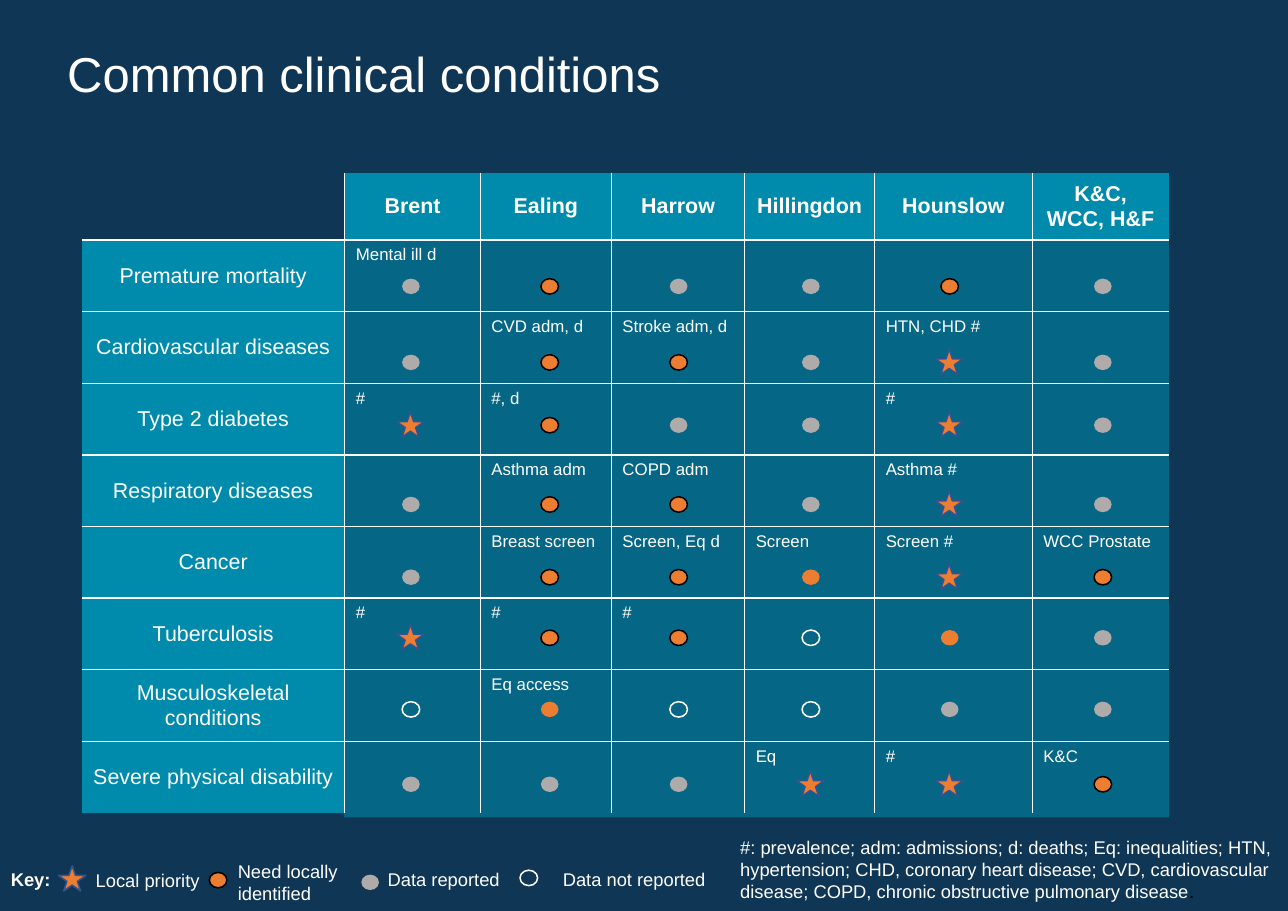
from lxml import etree
from pptx import Presentation
from pptx.dml.color import RGBColor
from pptx.enum.shapes import MSO_SHAPE
from pptx.enum.text import MSO_ANCHOR, MSO_AUTO_SIZE, PP_ALIGN
from pptx.oxml import parse_xml
from pptx.oxml.ns import nsdecls, qn
from pptx.util import Pt

PX = 9144  # 100 px to the inch
NAVY = RGBColor(0x0F, 0x36, 0x54)
TEAL = RGBColor(0x00, 0x8A, 0xAB)
WHITE = RGBColor(0xFF, 0xFF, 0xFF)
BLACK = RGBColor(0x00, 0x00, 0x00)
ORANGE = RGBColor(0xED, 0x7D, 0x31)
GREY = RGBColor(0xAF, 0xAB, 0xAB)
BLUE = RGBColor(0x32, 0x54, 0x91)

# Mark kinds: shape, width, height, fill, line
DOT = MSO_SHAPE.FLOWCHART_CONNECTOR
MARKS = {
    "star": (MSO_SHAPE.STAR_5_POINT, 25, 23, ORANGE, BLUE),
    "need": (DOT, 16, 14, ORANGE, BLACK),
    "plain": (DOT, 16, 14, ORANGE, None),
    "data": (DOT, 16, 14, GREY, None),
    "none": (DOT, 16, 14, None, WHITE),
}


def add_run(p, text, size, color=WHITE, bold=False, font="Arial"):
    r = p.add_run()
    r.text = text
    r.font.name = font
    r.font.size = Pt(size)
    r.font.bold = bold
    r.font.color.rgb = color


def add_mark(kind, cx, cy):
    shape, w, h, fill, line = MARKS[kind]
    sp = s.shapes.add_shape(shape, (cx - (w + 1) // 2) * PX,
                            (cy - (h + 1) // 2) * PX, w * PX, h * PX)
    sp.shadow.inherit = False
    if fill is None:
        sp.fill.background()
    else:
        sp.fill.solid()
        sp.fill.fore_color.rgb = fill
    if line is None:
        sp.line.fill.background()
    else:
        sp.line.color.rgb = line
        sp.line.width = Pt(1)


prs = Presentation()
prs.slide_width, prs.slide_height = 1169 * PX, 827 * PX
s = prs.slides.add_slide(prs.slide_layouts[5])
s.background.fill.solid()
s.background.fill.fore_color.rgb = NAVY

# Title
sp = s.shapes.title
sp.left, sp.top, sp.width, sp.height = 51 * PX, 41 * PX, 782 * PX, 160 * PX
tf = sp.text_frame
tf.auto_size = MSO_AUTO_SIZE.NONE
tf.vertical_anchor = MSO_ANCHOR.TOP
p = tf.paragraphs[0]
p.alignment = PP_ALIGN.LEFT
p.line_spacing = 0.9
add_run(p, "Common clinical conditions", 32)

# Translucent panel behind the table body
sp = s.shapes.add_shape(MSO_SHAPE.RECTANGLE, 312 * PX, 219 * PX, 749 * PX, 523 * PX)
sp.shadow.inherit = False
sp.fill.solid()
sp.fill.fore_color.rgb = TEAL
sp.line.fill.background()
clr = sp.fill._xPr.find(qn("a:solidFill"))[0]
etree.SubElement(clr, qn("a:alpha")).set("val", "58000")

# Table
ROWS = [
    ["", "Brent", "Ealing", "Harrow", "Hillingdon", "Hounslow", "K&C, WCC, H&F"],
    ["Premature mortality", "Mental ill d", "", "", "", "", ""],
    ["Cardiovascular diseases", "", "CVD adm, d", "Stroke adm, d", "", "HTN, CHD #", ""],
    ["Type 2 diabetes", "#", "#, d", "", "", "#", ""],
    ["Respiratory diseases", "", "Asthma adm", "COPD adm", "", "Asthma #", ""],
    ["Cancer", "", "Breast screen", "Screen, Eq d", "Screen", "Screen #", "WCC Prostate"],
    ["Tuberculosis", "#", "#", "#", "", "", ""],
    ["Musculoskeletal conditions", "", "Eq access", "", "", "", ""],
    ["Severe physical disability", "", "", "", "Eq", "#", "K&C"],
]
COL_WIDTHS = [239, 123, 119, 121, 118, 143, 124]
last_row, last_col = len(ROWS) - 1, len(COL_WIDTHS) - 1
tbl = s.shapes.add_table(len(ROWS), len(COL_WIDTHS), 74 * PX, 157 * PX,
                         sum(COL_WIDTHS) * PX, 581 * PX).table
tbl.first_row = tbl.horz_banding = False
for col, width in zip(tbl.columns, COL_WIDTHS):
    col.width = width * PX
for i, row in enumerate(ROWS):
    tbl.rows[i].height = (65 if i else 61) * PX
    for j, text in enumerate(row):
        cell = tbl.cell(i, j)
        heading = (i == 0) != (j == 0)
        p = cell.text_frame.paragraphs[0]
        if heading:
            cell.fill.solid()
            cell.fill.fore_color.rgb = TEAL
            cell.vertical_anchor = MSO_ANCHOR.MIDDLE
            p.alignment = PP_ALIGN.CENTER
        else:
            cell.fill.background()
        if text:
            add_run(p, text, 14 if heading else 11, bold=i == 0)
        # White lines on inner edges only
        edges = [("L", j > 0 ), ("R", j < last_col), ("T", i > 0), ("B", i < last_row)]
        for n, (side, inner) in enumerate(edges):
            paint = ('<a:solidFill><a:srgbClr val="FFFFFF"/></a:solidFill>'
                     if inner else "<a:noFill/>")
            cell._tc.get_or_add_tcPr().insert(n, parse_xml(
                f'<a:ln{side} {nsdecls("a")} w="12700">{paint}</a:ln{side}>'))

# Marks, one row of the table each
MARK_X = [373, 499, 616, 736, 862, 1001]
MARK_ROWS = [
    (260, "data need data data need data"),
    (329, "data need need data star data"),
    (386, "star need data data star data"),
    (458, "data need need data star data"),
    (524, "data need need plain star need"),
    (579, "star need need none plain data"),
    (644, "none plain none none data data"),
    (712, "data data data star star need"),
]
for y, kinds in MARK_ROWS:
    for x, kind in zip(MARK_X, kinds.split()):
        add_mark(kind, x, y)

# Key and abbreviations
for kind, x, y in [("star", 66, 798), ("need", 198, 799),
                   ("data", 336, 801), ("none", 480, 797)]:
    add_mark(kind, x, y)
NOTES = [
    ("Key:", 0, 783, 156, 30),
    ("Local priority", 77, 784, 116, 30),
    ("Need locally identified", 206, 776, 116, 50),
    ("Data reported", 342, 783, 192, 30),
    ("Data not reported", 501, 783, 192, 30),
    ("#: prevalence; adm: admissions; d: deaths; Eq: inequalities; HTN, "
     "hypertension; CHD, coronary heart disease; CVD, cardiovascular disease; "
     "COPD, chronic obstructive pulmonary disease", 662, 754, 503, 71),
]
for text, x, y, w, h in NOTES:
    tf = s.shapes.add_textbox(x * PX, y * PX, w * PX, h * PX).text_frame
    tf.word_wrap = True
    p = tf.paragraphs[0]
    add_run(p, text, 12, bold=text == "Key:")
add_run(p, ".", 12, BLACK, font="Calibri")

prs.save("out.pptx")
